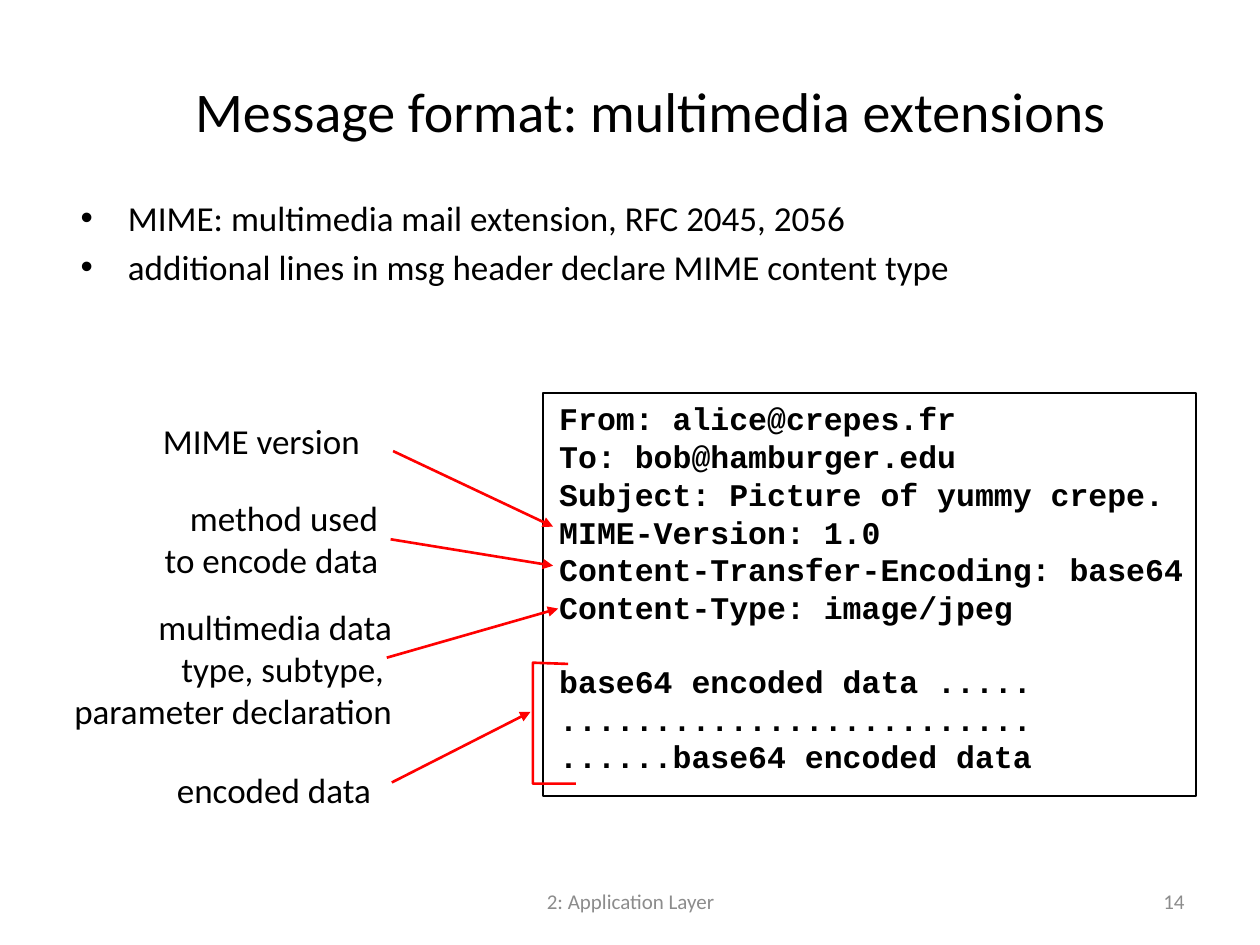
from lxml import etree
from pptx import Presentation
from pptx.dml.color import RGBColor
from pptx.enum.shapes import MSO_CONNECTOR, MSO_SHAPE
from pptx.enum.text import MSO_ANCHOR, MSO_AUTO_SIZE, PP_ALIGN
from pptx.oxml.ns import qn
from pptx.util import Inches, Pt

LEFT, CENTER, RIGHT = PP_ALIGN.LEFT, PP_ALIGN.CENTER, PP_ALIGN.RIGHT
TOP, MIDDLE = MSO_ANCHOR.TOP, MSO_ANCHOR.MIDDLE
BLACK, GRAY, RED = "000000", "8C8C8C", "FF0000"

BULLETS = [
    "MIME: multimedia mail extension, RFC 2045, 2056",
    "additional lines in msg header declare MIME content type",
]
MESSAGE_HEADER = [
    "From: alice@crepes.fr",
    "To: bob@hamburger.edu",
    "Subject: Picture of yummy crepe.",
    "MIME-Version: 1.0",
    "Content-Transfer-Encoding: base64",
    "Content-Type: image/jpeg",
]
MESSAGE_BODY = [
    "base64 encoded data .....",
    ".........................",
    "......base64 encoded data",
]
# Each callout: lines, box, alignment, arrow start, arrow end
CALLOUTS = [
    (["MIME version"], (1.06, 3.28, 2.03, 0.43), CENTER,
     (3.12, 3.58), (4.39, 4.18)),
    (["method used", "to encode data"], (0.98, 3.89, 2.12, 0.77), RIGHT,
     (3.1, 4.28), (4.39, 4.49)),
    (["multimedia data", "type, subtype, ", "parameter declaration"],
     (0.12, 4.76, 3.09, 1.1), RIGHT, (3.07, 5.22), (4.43, 4.83)),
    (["encoded data"], (1.21, 6.05, 1.93, 0.43), CENTER,
     (3.11, 6.21), (4.21, 5.65)),
]
BRACKET = [(4.51, 5.27), (4.23, 5.26), (4.23, 6.22), (4.57, 6.22)]


def color(value):
    return RGBColor.from_string(value)


def inches(values):
    return [Inches(value) for value in values]


def write_text(shape, lines, size=20, font="Calibri", fill=BLACK, bold=False,
               align=LEFT, anchor=TOP):
    """Fill a shape with one paragraph per line."""
    frame = shape.text_frame
    frame.word_wrap = True
    frame.auto_size = MSO_AUTO_SIZE.NONE
    frame.vertical_anchor = anchor
    frame.text = "\n".join(lines)
    for paragraph in frame.paragraphs:
        paragraph.alignment = align
        for run in paragraph.runs:
            run.font.name = font
            run.font.size = Pt(size)
            run.font.bold = bold
            run.font.color.rgb = color(fill)
    return frame


def fill_placeholder(placeholder, box, lines, **text_format):
    (placeholder.left, placeholder.top,
     placeholder.width, placeholder.height) = inches(box)
    write_text(placeholder, lines, **text_format)


def add_text(shapes, box, lines, **text_format):
    return write_text(shapes.add_textbox(*inches(box)), lines, **text_format)


def style_line(shape, line_color, width):
    shape.line.color.rgb = color(line_color)
    shape.line.width = Pt(width)


def add_message(slide):
    """Mail message in a frame; the body is set one line below the header."""
    group = slide.shapes.add_group_shape()
    frame = add_text(group.shapes, (4.34, 3.12, 5.44, 3.4),
                     MESSAGE_HEADER + MESSAGE_BODY,
                     size=18, font="Courier New", bold=True)
    frame.paragraphs[len(MESSAGE_HEADER)].space_before = Pt(20.4)

    border = group.shapes.add_shape(MSO_SHAPE.RECTANGLE,
                                    *inches((4.31, 3.12, 5.18, 3.2)))
    border.shadow.inherit = False
    border.fill.background()
    style_line(border, BLACK, 1)


def add_arrow(slide, start, end):
    arrow = slide.shapes.add_connector(MSO_CONNECTOR.STRAIGHT,
                                       *inches(start + end))
    style_line(arrow, RED, 1.5)
    line = arrow.line._get_or_add_ln()
    etree.SubElement(line, qn("a:tailEnd"), type="triangle")
    etree.SubElement(arrow._element.spPr, qn("a:effectLst"))


def add_bracket(slide, points):
    start, *rest = [inches(point) for point in points]
    builder = slide.shapes.build_freeform(*start)
    builder.add_line_segments(rest, close=False)
    bracket = builder.convert_to_shape()
    bracket.shadow.inherit = False
    bracket.fill.background()
    style_line(bracket, RED, 1.5)


def main():
    presentation = Presentation()
    presentation.slide_width, presentation.slide_height = inches((10, 7.5))
    slide = presentation.slides.add_slide(presentation.slide_layouts[1])

    # Title and bullets
    fill_placeholder(slide.shapes.title, (0.58, 0.25, 9.17, 1.25),
                     ["Message format: multimedia extensions"],
                     size=32, align=CENTER, anchor=MIDDLE)
    fill_placeholder(slide.placeholders[1], (0.54, 1.51, 8.01, 5.08), BULLETS)

    # Message with its callouts
    add_message(slide)
    for lines, box, align, start, end in CALLOUTS:
        add_text(slide.shapes, box, lines, align=align)
        add_arrow(slide, start, end)
    add_bracket(slide, BRACKET)

    # Footer and slide number
    add_text(slide.shapes, (3.42, 6.95, 3.17, 0.4), ["2: Application Layer"],
             size=12, fill=GRAY, align=CENTER, anchor=MIDDLE)
    add_text(slide.shapes, (7.17, 6.95, 2.33, 0.4), ["14"],
             size=12, fill=GRAY, align=RIGHT, anchor=MIDDLE)

    presentation.save("out.pptx")


if __name__ == "__main__":
    main()
